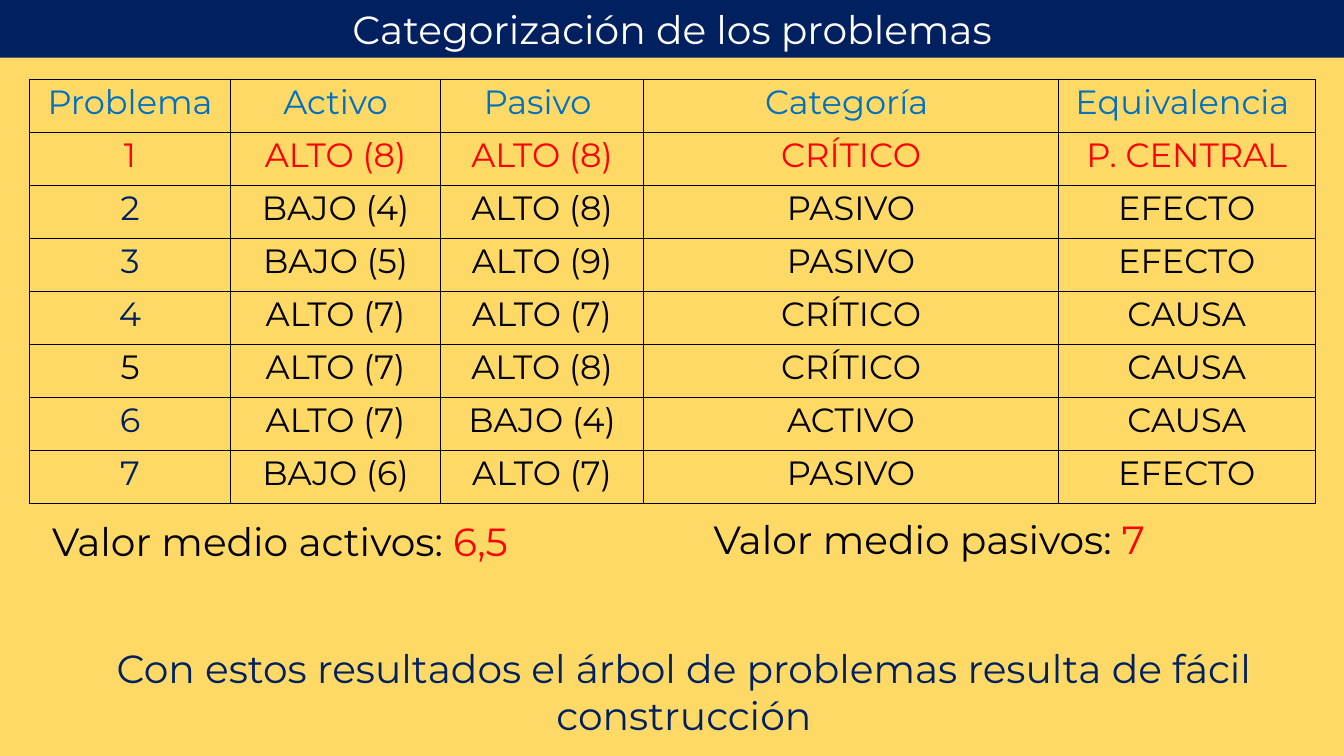
from lxml.etree import SubElement
from pptx import Presentation
from pptx.dml.color import RGBColor
from pptx.enum.shapes import MSO_SHAPE
from pptx.enum.text import MSO_ANCHOR, PP_ALIGN
from pptx.oxml.ns import qn
from pptx.util import Pt

COLORS = {
    "sand": "FFD966",
    "navy": "002060",
    "blue": "0070C0",
    "red": "FF0000",
    "black": "000000",
    "white": "FFFFFF",
}

HEADINGS = ["Problema", "Activo", "Pasivo ", "Categoría ", "Equivalencia "]
PROBLEMS = [
    ["1", "ALTO (8)", "ALTO (8)", "CRÍTICO", "P. CENTRAL"],
    ["2", "BAJO (4)", "ALTO (8)", "PASIVO", "EFECTO"],
    ["3", "BAJO (5)", "ALTO (9)", "PASIVO", "EFECTO"],
    ["4", "ALTO (7)", "ALTO (7)", "CRÍTICO", "CAUSA"],
    ["5", "ALTO (7)", "ALTO (8)", "CRÍTICO", "CAUSA"],
    ["6", "ALTO (7)", "BAJO (4)", "ACTIVO", "CAUSA"],
    ["7", "BAJO (6)", "ALTO (7)", "PASIVO", "EFECTO"],
]
COLUMN_WIDTHS = [144, 149.5, 145.5, 296, 183.6]
ROW_HEIGHT = 37.87


def problem_color(row, column):
    """Heading, central problem, problem numbers and ratings differ in colour."""
    if row == 0:
        return "blue"
    if row == 1:
        return "red"
    return "navy" if column == 0 and row != 5 else "black"


class SlideBuilder:
    font = "Montserrat"
    text_size = 28
    table_size = 24

    def __init__(self, slide):
        self.slide = slide

    def rgb(self, color):
        return RGBColor.from_string(COLORS[color])

    def style(self, run, color, size):
        run.font.name = self.font
        run.font.size = Pt(size)
        run.font.color.rgb = self.rgb(color)

    def band(self, height, color, text=""):
        band = self.slide.shapes.add_shape(
            MSO_SHAPE.RECTANGLE, 0, 0, Pt(960), Pt(height))
        band.shadow.inherit = False
        band.fill.solid()
        band.fill.fore_color.rgb = self.rgb(color)
        band.line.fill.background()
        if text:
            frame = band.text_frame
            frame.text = text
            frame.vertical_anchor = MSO_ANCHOR.MIDDLE
            frame.paragraphs[0].alignment = PP_ALIGN.CENTER
            self.style(frame.paragraphs[0].runs[0], "white", self.text_size)

    def text(self, left, top, width, height, text, color,
             value="", align=PP_ALIGN.LEFT):
        box = self.slide.shapes.add_textbox(
            Pt(left), Pt(top), Pt(width), Pt(height))
        frame = box.text_frame
        frame.word_wrap = True
        frame.text = text
        paragraph = frame.paragraphs[0]
        paragraph.alignment = align
        self.style(paragraph.runs[0], color, self.text_size)
        if value:
            result = paragraph.add_run()
            result.text = value
            self.style(result, "red", self.text_size)

    def borders(self, cell):
        properties = cell._tc.get_or_add_tcPr()
        for side in ("lnL", "lnR", "lnT", "lnB"):
            line = SubElement(properties, qn(f"a:{side}"), w=str(Pt(1)))
            fill = SubElement(line, qn("a:solidFill"))
            SubElement(fill, qn("a:srgbClr"), val=COLORS["black"])

    def table(self, left, top, widths, row_height, rows, color_of):
        table = self.slide.shapes.add_table(
            len(rows), len(widths), Pt(left), Pt(top),
            Pt(sum(widths)), Pt(row_height * len(rows))).table
        table.first_row = table.horz_banding = False
        for column, width in zip(table.columns, widths):
            column.width = Pt(width)
        for r, texts in enumerate(rows):
            table.rows[r].height = Pt(row_height)
            for c, text in enumerate(texts):
                self.cell(table.cell(r, c), text, color_of(r, c))

    def cell(self, cell, text, color):
        self.borders(cell)
        cell.fill.background()
        cell.margin_left = cell.margin_right = Pt(5)
        cell.margin_top = cell.margin_bottom = 0
        cell.text_frame.text = text
        paragraph = cell.text_frame.paragraphs[0]
        paragraph.alignment = PP_ALIGN.CENTER
        paragraph.line_spacing = 1.07
        self.style(paragraph.runs[0], color, self.table_size)


def main():
    deck = Presentation()
    deck.slide_width, deck.slide_height = Pt(960), Pt(540)
    builder = SlideBuilder(deck.slides.add_slide(deck.slide_layouts[6]))

    # Background and title
    builder.band(552, "sand")
    builder.band(41.2, "navy", "Categorización de los problemas")

    # Problem categories
    builder.table(20.9, 56.7, COLUMN_WIDTHS, ROW_HEIGHT,
                  [HEADINGS] + PROBLEMS, problem_color)

    # Conclusion and mean values
    builder.text(52.5, 456.5, 872, 75,
                 "Con estos resultados el árbol de problemas resulta "
                 "de fácil construcción", "navy", align=PP_ALIGN.CENTER)
    builder.text(30.2, 366, 387, 41.2, "Valor medio activos: ", "black", "6,5")
    builder.text(502.6, 364.5, 394, 41.2, "Valor medio pasivos: ", "black", "7")

    deck.save("out.pptx")


if __name__ == "__main__":
    main()
